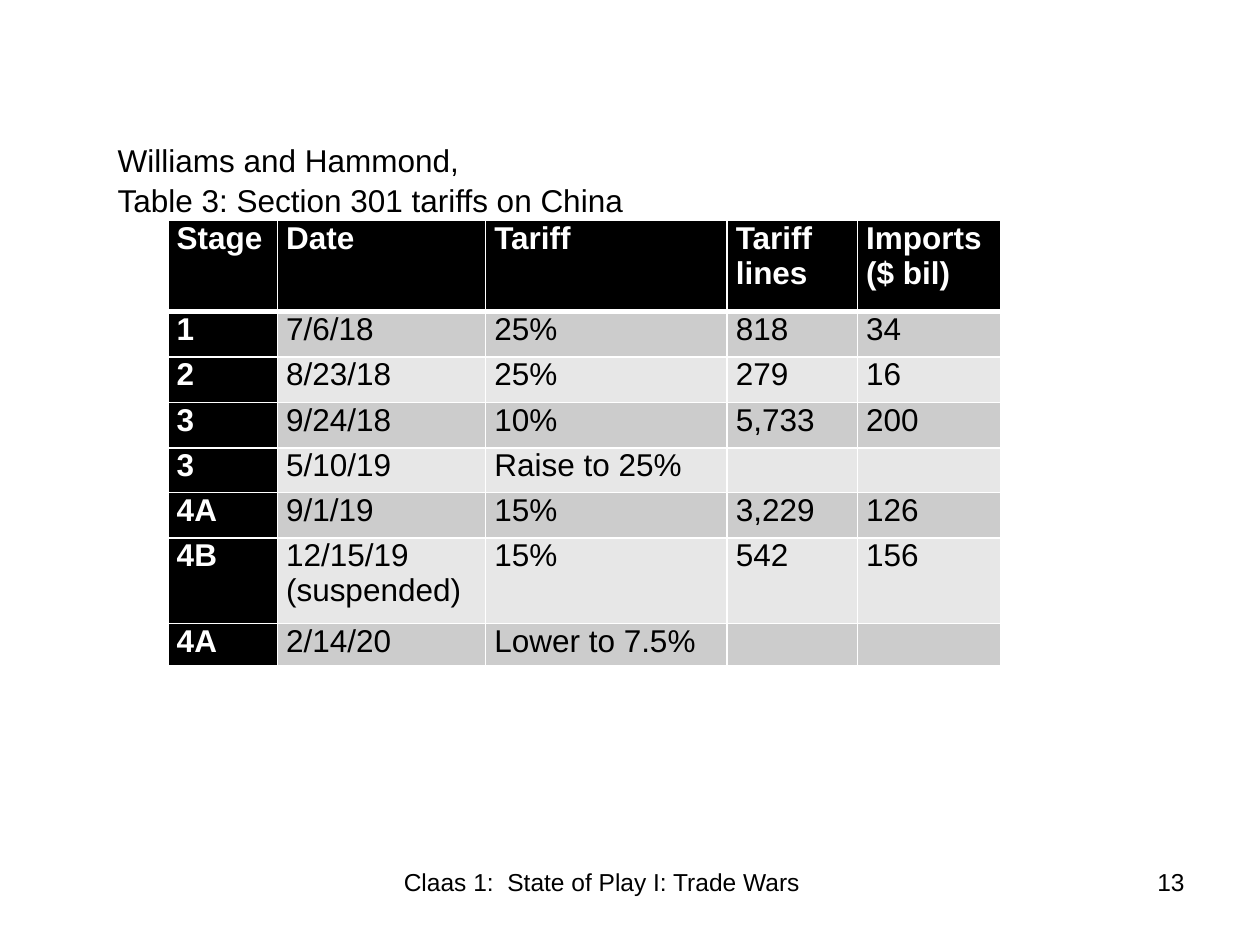
from lxml import etree
from pptx import Presentation
from pptx.dml.color import RGBColor
from pptx.enum import text
from pptx.oxml import ns
from pptx.util import Pt

BLACK, WHITE = "000000", "FFFFFF"
BANDS = ("CCCCCC", "E7E7E7")
TITLE_ONLY = 5

COLUMN_WIDTHS = (62.5, 119, 138, 74.5, 82)
ROW_HEIGHTS = (52, 26, 26, 26, 25.5, 26, 49, 24)
TARIFFS = (
    ("Stage", "Date", "Tariff", "Tariff lines", "Imports ($ bil)"),
    ("1", "7/6/18", "25%", "818", "34"),
    ("2", "8/23/18", "25%", "279", "16"),
    ("3", "9/24/18", "10%", "5,733", "200"),
    ("3", "5/10/19", "Raise to 25%", "", ""),
    ("4A", "9/1/19", "15%", "3,229", "126"),
    ("4B", "12/15/19 (suspended)", "15%", "542", "156"),
    ("4A", "2/14/20", "Lower to 7.5%", "", ""),
)


def rgb(value):
    return RGBColor.from_string(value)


class SlideBuilder:
    """Holds the text style and the slide being filled."""

    font = "Arial"
    size = 18
    small = 14

    def __init__(self, slide):
        self.slide = slide

    def add_span(self, para, words, size, color=BLACK, bold=False):
        span = para.add_run()
        span.text = words
        span.font.name = self.font
        span.font.size = Pt(size)
        span.font.bold = bold
        span.font.color.rgb = rgb(color)

    def place(self, shape, left, top, width, height):
        shape.left, shape.top = Pt(left), Pt(top)
        shape.width, shape.height = Pt(width), Pt(height)

    def title(self, lines, *bounds):
        box = self.slide.shapes.title
        self.place(box, *bounds)
        frame = box.text_frame
        frame.auto_size = text.MSO_AUTO_SIZE.NONE
        frame.vertical_anchor = text.MSO_ANCHOR.TOP
        frame.word_wrap = False
        for index, line in enumerate(lines):
            para = frame.add_paragraph() if index else frame.paragraphs[0]
            para.alignment = text.PP_ALIGN.LEFT
            para.line_spacing = 1.05
            self.add_span(para, line, self.size)

    def footer(self, words, align, *bounds):
        box = self.slide.shapes.add_textbox(*map(Pt, bounds))
        box.text_frame.word_wrap = True
        para = box.text_frame.paragraphs[0]
        para.alignment = align
        self.add_span(para, words, self.small)

    def table(self, rows, widths, heights, left, top):
        frame = self.slide.shapes.add_table(
            len(rows), len(widths), Pt(left), Pt(top),
            Pt(sum(widths)), Pt(sum(heights)))
        table = frame.table
        for column, width in zip(table.columns, widths):
            column.width = Pt(width)
        for row, height in zip(table.rows, heights):
            row.height = Pt(height)
        table.first_col = True
        for r, row in enumerate(rows):
            for c, words in enumerate(row):
                heading = r == 0 or c == 0
                fill = BLACK if heading else BANDS[(r - 1) % 2]
                self.cell(table.cell(r, c), words, fill, heading)
                self.borders(table.cell(r, c),
                             above=3 if r == 1 else 1,
                             below=3 if r == 0 else 1)

    def cell(self, cell, words, fill, heading):
        cell.margin_left = cell.margin_right = Pt(5)
        cell.margin_top = cell.margin_bottom = 0
        cell.fill.solid()
        cell.fill.fore_color.rgb = rgb(fill)
        if words:
            self.add_span(cell.text_frame.paragraphs[0], words, self.size,
                          WHITE if heading else BLACK, heading)

    def borders(self, cell, above, below):
        """Draw white cell edges, with widths in points."""
        properties = cell._tc.get_or_add_tcPr()
        edges = (("a:lnL", 1), ("a:lnR", 1), ("a:lnT", above), ("a:lnB", below))
        for index, (tag, width) in enumerate(edges):
            line = etree.Element(ns.qn(tag), w=str(int(Pt(width))))
            fill = etree.SubElement(line, ns.qn("a:solidFill"))
            etree.SubElement(fill, ns.qn("a:srgbClr"), val=WHITE)
            properties.insert(index, line)


def main():
    deck = Presentation()
    deck.slide_width, deck.slide_height = Pt(720), Pt(540)
    page = SlideBuilder(deck.slides.add_slide(deck.slide_layouts[TITLE_ONLY]))
    page.footer("Claas 1:  State of Play I: Trade Wars",
                text.PP_ALIGN.CENTER, 206, 492, 276, 37.5)
    page.footer("13", text.PP_ALIGN.RIGHT, 516, 492, 168, 37.5)
    page.table(TARIFFS, COLUMN_WIDTHS, ROW_HEIGHTS, 96, 126)
    page.title(("Williams and Hammond,", "Table 3: Section 301 tariffs on China"),
               60, 76, 311, 73)
    deck.save("out.pptx")


if __name__ == "__main__":
    main()
